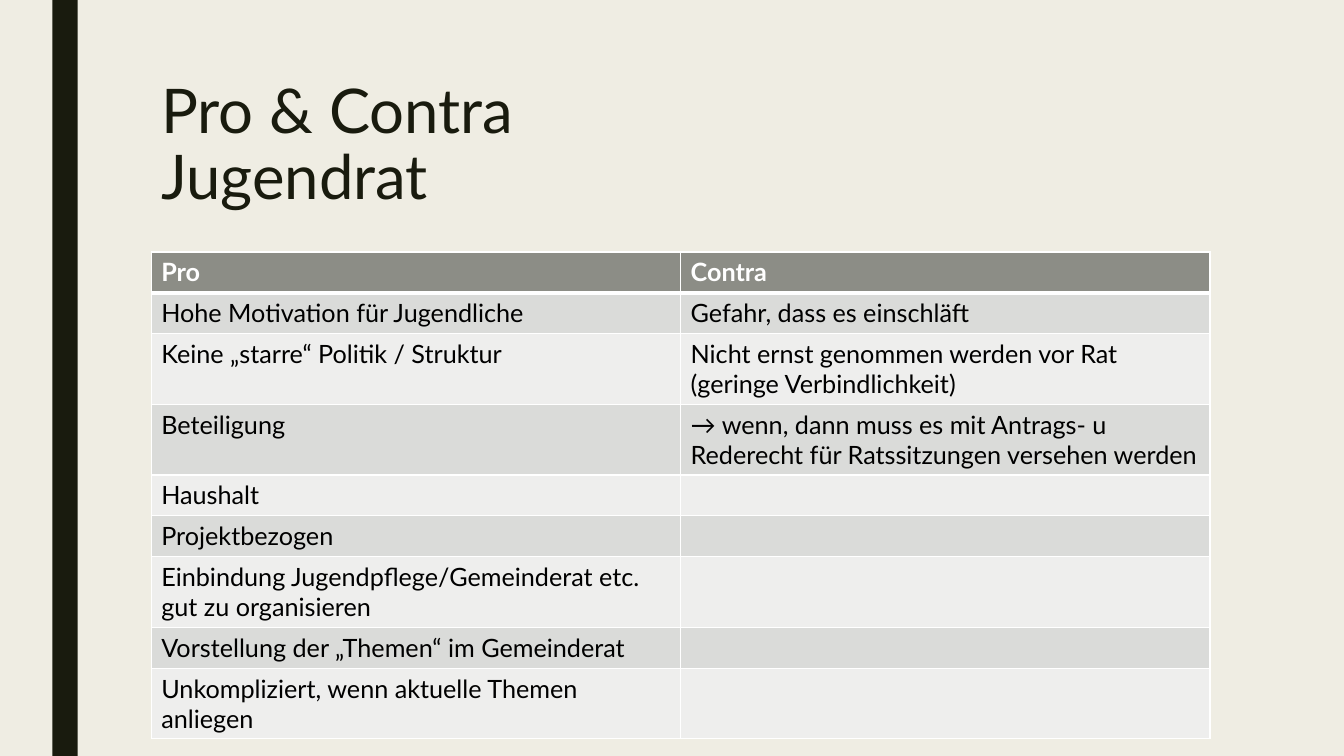
from lxml import etree
from pptx import Presentation
from pptx.dml.color import RGBColor
from pptx.enum.shapes import MSO_SHAPE
from pptx.enum.text import MSO_ANCHOR, MSO_AUTO_SIZE, PP_ALIGN
from pptx.oxml.ns import qn
from pptx.util import Inches, Pt

RECTANGLE = MSO_SHAPE.RECTANGLE
TOP = MSO_ANCHOR.TOP
NO_AUTOFIT = MSO_AUTO_SIZE.NONE
LEFT = PP_ALIGN.LEFT

TITLE = "Pro & Contra\nJugendrat"
ROWS = [
    ("Pro", "Contra"),
    ("Hohe Motivation für Jugendliche", "Gefahr, dass es einschläft"),
    ("Keine „starre“ Politik / Struktur",
     "Nicht ernst genommen werden vor Rat (geringe Verbindlichkeit)"),
    ("Beteiligung",
     "→ wenn, dann muss es mit Antrags- u Rederecht für Ratssitzungen versehen werden"),
    ("Haushalt", ""),
    ("Projektbezogen", ""),
    ("Einbindung Jugendpflege/Gemeinderat etc. gut zu organisieren", ""),
    ("Vorstellung der „Themen“ im Gemeinderat", ""),
    ("Unkompliziert, wenn aktuelle Themen anliegen", ""),
]
COLORS = {
    "background": "EFEDE3",
    "dark": "191B0E",
    "header": "8C8D86",
    "odd": "DADBD9",
    "even": "EEEEED",
    "white": "FFFFFF",
    "black": "000000",
}
FONT = "Lato"
CONTENT_LEFT, CONTENT_WIDTH = Inches(1.5), Inches(10.5)
ROW_HEIGHT = Pt(29.2)


def paint(fill, color):
    fill.solid()
    fill.fore_color.rgb = RGBColor.from_string(COLORS[color])


def write(frame, text, size, color, bold=False, line_spacing=None):
    para = frame.paragraphs[0]
    para.text = text
    para.alignment = LEFT
    if line_spacing:
        para.line_spacing = line_spacing
    for span in para.runs:
        span.font.name = FONT
        span.font.size = Pt(size)
        span.font.bold = bold
        span.font.color.rgb = RGBColor.from_string(COLORS[color])


def add_borders(cell, widths):
    """Draw white borders; widths maps each side (L, R, T, B) to points."""
    properties = cell._tc.get_or_add_tcPr()
    for index, (side, width) in enumerate(widths.items()):
        line = etree.Element(qn(f"a:ln{side}"), w=str(Pt(width)))
        fill = etree.SubElement(line, qn("a:solidFill"))
        etree.SubElement(fill, qn("a:srgbClr"), val=COLORS["white"])
        properties.insert(index, line)


def add_pro_contra_table(page):
    table = page.shapes.add_table(
        len(ROWS), len(ROWS[0]), CONTENT_LEFT, Inches(2.5),
        CONTENT_WIDTH, ROW_HEIGHT * len(ROWS)).table
    for row_index, texts in enumerate(ROWS):
        table.rows[row_index].height = ROW_HEIGHT
        is_header = row_index == 0
        band = "header" if is_header else ("even", "odd")[row_index % 2]
        top = 3 if row_index == 1 else 1
        bottom = 3 if is_header else 1
        for column_index, text in enumerate(texts):
            cell = table.cell(row_index, column_index)
            write(cell.text_frame, text, size=18, bold=is_header,
                  color="white" if is_header else "black")
            paint(cell.fill, band)
            add_borders(cell, {"L": 1, "R": 1, "T": top, "B": bottom})


def main():
    deck = Presentation()
    deck.slide_width, deck.slide_height = Inches(13.33), Inches(7.5)
    page = deck.slides.add_slide(deck.slide_layouts.get_by_name("Title Only"))
    paint(page.background.fill, "background")

    stripe = page.shapes.add_shape(
        RECTANGLE, Inches(0.52), 0, Inches(0.25), deck.slide_height)
    stripe.shadow.inherit = False
    paint(stripe.fill, "dark")
    stripe.line.fill.background()

    title = page.shapes.title
    title.left, title.top = CONTENT_LEFT, Inches(0.75)
    title.width, title.height = CONTENT_WIDTH, Inches(1.62)
    title.text_frame.vertical_anchor = TOP
    title.text_frame.auto_size = NO_AUTOFIT
    write(title.text_frame, TITLE, size=44, color="dark", line_spacing=0.89)

    add_pro_contra_table(page)
    deck.save("out.pptx")


if __name__ == "__main__":
    main()
